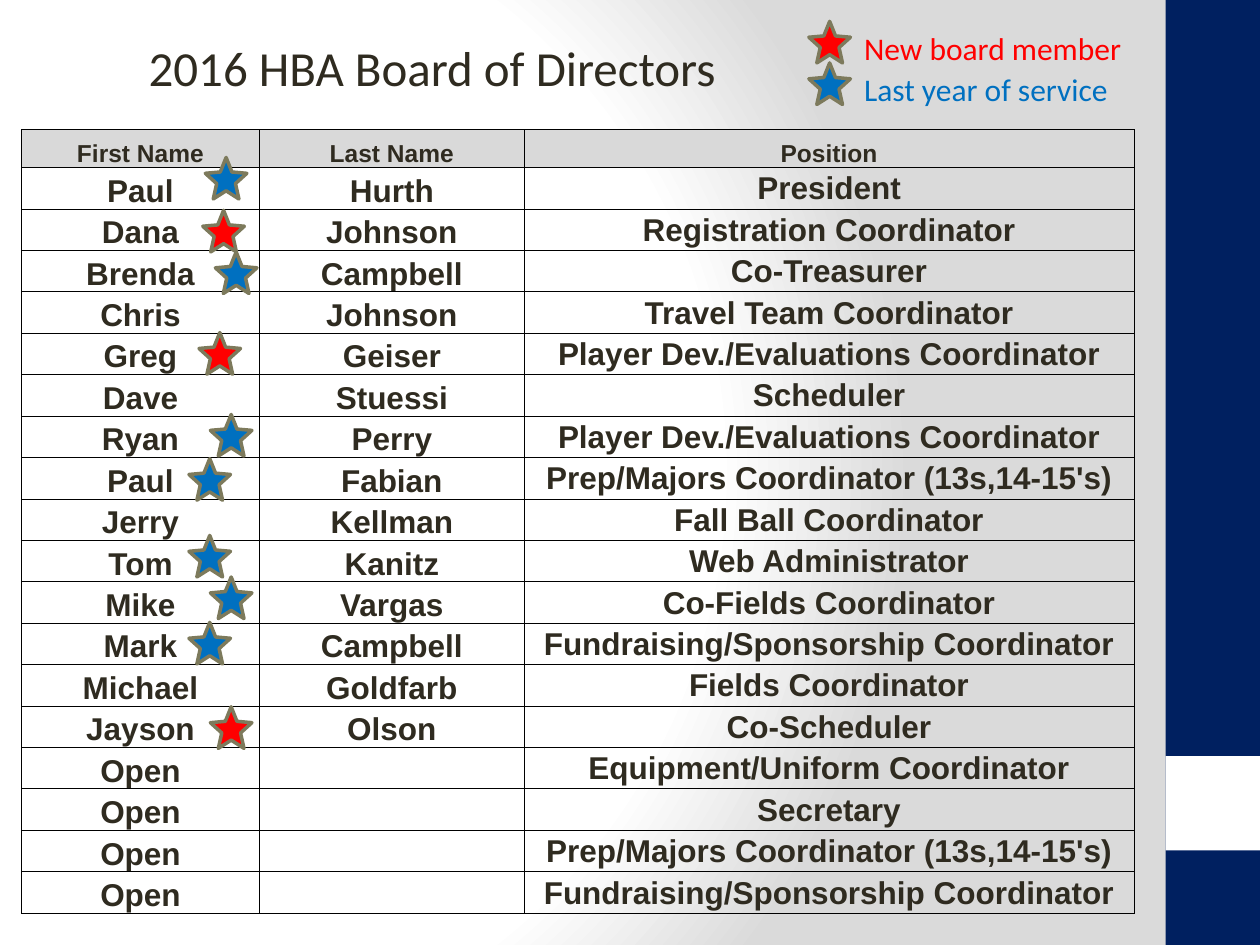
from dataclasses import dataclass

from pptx import Presentation
from pptx.dml.color import RGBColor
from pptx.enum.shapes import MSO_SHAPE
from pptx.enum.text import MSO_ANCHOR, PP_ALIGN
from pptx.oxml import parse_xml
from pptx.oxml.ns import nsdecls
from pptx.util import Inches, Pt


@dataclass(frozen=True)
class Theme:
    """Colours, fonts and type sizes of the slide."""
    ink: str = "2F2B20"
    navy: str = "002060"
    white: str = "FFFFFF"
    shade: str = "DADADA"
    header: str = "D9D9D9"
    border: str = "000000"
    outline: str = "7D7A5C"
    new: str = "FF0000"
    last: str = "0070C0"
    heading_font: str = "Calibri"
    table_font: str = "Arial"
    title_size: int = 28
    body_size: int = 18
    header_size: int = 14


THEME = Theme()
HEADERS = ("First Name", "Last Name", "Position")
DIRECTORS = (
    ("Paul", "Hurth", "President"),
    ("Dana", "Johnson", "Registration Coordinator"),
    ("Brenda", "Campbell", "Co-Treasurer"),
    ("Chris", "Johnson", "Travel Team Coordinator"),
    ("Greg", "Geiser", "Player Dev./Evaluations Coordinator"),
    ("Dave", "Stuessi", "Scheduler"),
    ("Ryan", "Perry", "Player Dev./Evaluations Coordinator"),
    ("Paul", "Fabian", "Prep/Majors Coordinator (13s,14-15's)"),
    ("Jerry", "Kellman", "Fall Ball Coordinator"),
    ("Tom", "Kanitz", "Web Administrator"),
    ("Mike", "Vargas", "Co-Fields Coordinator"),
    ("Mark", "Campbell", "Fundraising/Sponsorship Coordinator"),
    ("Michael", "Goldfarb", "Fields Coordinator"),
    ("Jayson", "Olson", "Co-Scheduler"),
    ("Open", "", "Equipment/Uniform Coordinator"),
    ("Open", "", "Secretary"),
    ("Open", "", "Prep/Majors Coordinator (13s,14-15's)"),
    ("Open", "", "Fundraising/Sponsorship Coordinator"),
)
COLUMN_WIDTHS = (1.89, 2.1, 4.84)
TABLE_HEIGHT = 6.22
HEADER_HEIGHT = 0.3
NEW_MEMBER_STARS = ((1.61, 1.67), (1.58, 2.64), (1.67, 5.61))
LAST_YEAR_STARS = ((1.63, 1.25), (1.71, 2), (1.67, 3.29), (1.5, 3.64),
                   (1.5, 4.25), (1.67, 4.58), (1.5, 4.94))


def set_background(page):
    """Fill the page with a radial gradient from white to grey."""
    stops = "".join(
        f'<a:gs pos="{place * 1000}"><a:srgbClr val="{color}"/></a:gs>'
        for place, color in ((0, THEME.white), (75, THEME.white), (100, THEME.shade)))
    background = parse_xml(
        f'<p:bg {nsdecls("p", "a")}><p:bgPr><a:gradFill rotWithShape="1">'
        f'<a:gsLst>{stops}</a:gsLst><a:path path="circle">'
        '<a:fillToRect l="20000" t="50000" r="100000" b="50000"/></a:path>'
        '</a:gradFill><a:effectLst/></p:bgPr></p:bg>')
    page.element.cSld.insert(0, background)


def style_text(frame, size, color, font, bold=False):
    """Format every run of a text frame."""
    for para in frame.paragraphs:
        for span in para.runs:
            span.font.size = Pt(size)
            span.font.name = font
            span.font.bold = bold
            span.font.color.rgb = RGBColor.from_string(color)


def add_block(page, top, height, color):
    """Add one plain block of the right-hand band."""
    block = page.shapes.add_shape(
        MSO_SHAPE.RECTANGLE, Inches(9.25), Inches(top), Inches(0.75), Inches(height))
    block.shadow.inherit = False
    block.fill.solid()
    block.fill.fore_color.rgb = RGBColor.from_string(color)
    block.line.fill.background()


def add_star(page, left, top, color):
    """Add a star marker."""
    star = page.shapes.add_shape(
        MSO_SHAPE.STAR_5_POINT, Inches(left), Inches(top), Inches(0.33), Inches(0.33))
    star.adjustments[0] = 0.226
    star.shadow.inherit = False
    star.fill.solid()
    star.fill.fore_color.rgb = RGBColor.from_string(color)
    star.line.color.rgb = RGBColor.from_string(THEME.outline)
    star.line.width = Pt(2)


def add_legend_entry(page, top, text, color):
    """Add a star with its meaning beside it."""
    add_star(page, 6.42, top, color)
    box = page.shapes.add_textbox(
        Inches(6.76), Inches(top + 0.01), Inches(2.4), Inches(0.4))
    box.text_frame.word_wrap = True
    box.text_frame.text = text
    style_text(box.text_frame, THEME.body_size, color, THEME.heading_font)


def set_title(page, text):
    """Place and format the title placeholder."""
    title = page.shapes.title
    title.left, title.top = Inches(1.08), Inches(0.25)
    title.width, title.height = Inches(6.08), Inches(0.57)
    frame = title.text_frame
    frame.text = text
    frame.word_wrap = True
    frame.vertical_anchor = MSO_ANCHOR.TOP
    frame.paragraphs[0].alignment = PP_ALIGN.LEFT
    style_text(frame, THEME.title_size, THEME.ink, THEME.heading_font)


def add_borders(cell):
    """Draw a thin line on all four sides of a cell."""
    properties = cell._tc.get_or_add_tcPr()
    for side in ("lnL", "lnR", "lnT", "lnB"):
        properties.append(parse_xml(
            f'<a:{side} {nsdecls("a")} w="{Pt(0.5)}"><a:solidFill>'
            f'<a:srgbClr val="{THEME.border}"/></a:solidFill></a:{side}>'))


def fill_cell(cell, text, is_header, anchor):
    """Write and format one table cell."""
    cell.margin_left = cell.margin_right = cell.margin_top = Inches(0.01)
    cell.margin_bottom = 0
    cell.vertical_anchor = anchor
    cell.text_frame.text = text
    cell.text_frame.paragraphs[0].alignment = PP_ALIGN.CENTER
    size = THEME.header_size if is_header else THEME.body_size
    style_text(cell.text_frame, size, THEME.ink, THEME.table_font, bold=True)
    add_borders(cell)
    if is_header:
        cell.fill.solid()
        cell.fill.fore_color.rgb = RGBColor.from_string(THEME.header)
    else:
        cell.fill.background()


def add_directors_table(page):
    """Add the table of directors with its header row."""
    rows = (HEADERS, *DIRECTORS)
    table = page.shapes.add_table(
        len(rows), len(HEADERS), Inches(0.17), Inches(1.03),
        Inches(sum(COLUMN_WIDTHS)), Inches(TABLE_HEIGHT)).table
    table.first_row = table.horz_banding = False
    for column, width in zip(table.columns, COLUMN_WIDTHS):
        column.width = Inches(width)
    row_height = (TABLE_HEIGHT - HEADER_HEIGHT) / len(DIRECTORS)
    for row_index, texts in enumerate(rows):
        is_header = row_index == 0
        table.rows[row_index].height = Inches(HEADER_HEIGHT if is_header else row_height)
        for column_index, text in enumerate(texts):
            is_position = column_index == 2 and not is_header
            anchor = MSO_ANCHOR.MIDDLE if is_position else MSO_ANCHOR.BOTTOM
            fill_cell(table.cell(row_index, column_index), text, is_header, anchor)


def main():
    """Build the slide and save it."""
    deck = Presentation()
    deck.slide_width, deck.slide_height = Inches(10), Inches(7.5)
    page = deck.slides.add_slide(deck.slide_layouts[5])
    set_background(page)
    add_block(page, 0, 7.5, THEME.navy)
    add_block(page, 6, 0.75, THEME.white)
    add_directors_table(page)
    set_title(page, "2016 HBA Board of Directors")
    add_legend_entry(page, 0.17, "New board member", THEME.new)
    add_legend_entry(page, 0.5, "Last year of service", THEME.last)
    for color, places in ((THEME.new, NEW_MEMBER_STARS), (THEME.last, LAST_YEAR_STARS)):
        for left, top in places:
            add_star(page, left, top, color)
    deck.save("out.pptx")


if __name__ == "__main__":
    main()
